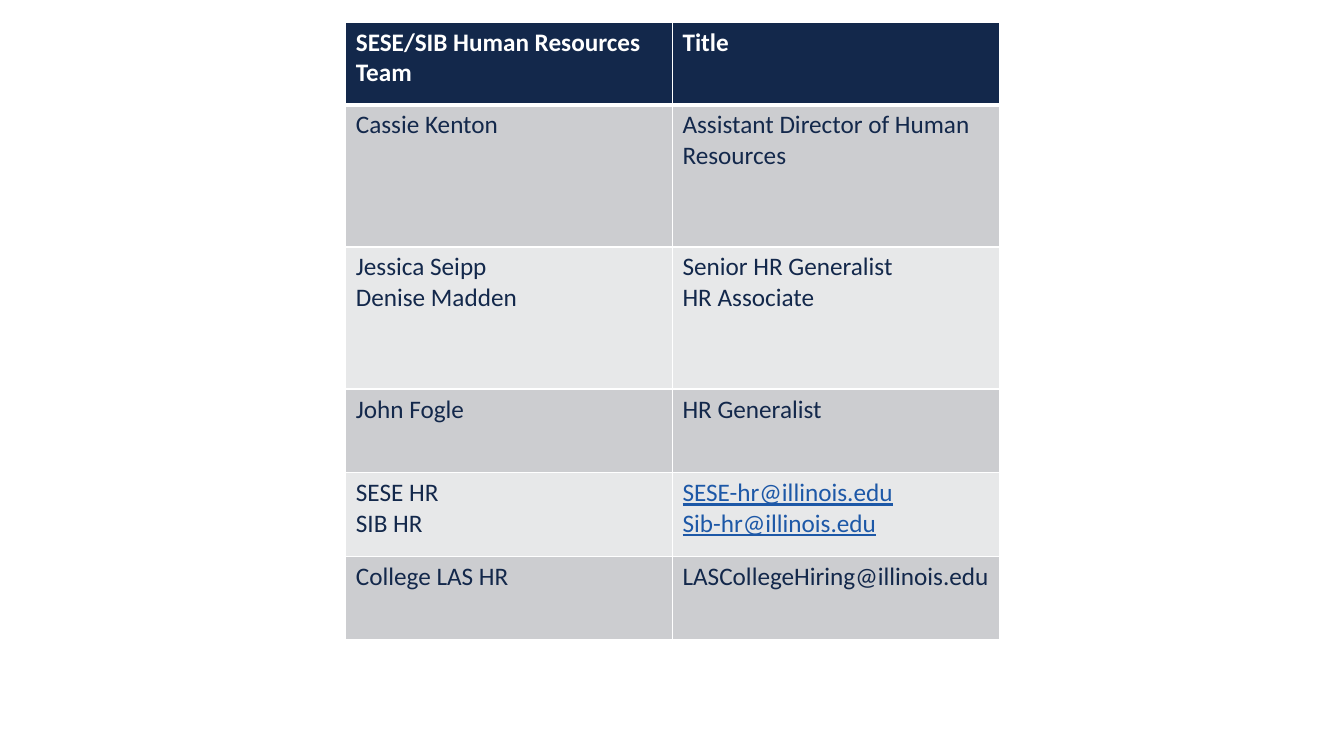
import dataclasses

import pptx
import pptx.dml.color
import pptx.oxml
import pptx.oxml.ns
import pptx.util
from pptx.util import Inches


@dataclasses.dataclass(frozen=True)
class Theme:
    font: str = "Calibri"
    size: int = 18
    navy: str = "13284B"
    white: str = "FFFFFF"
    link: str = "1D58A7"
    dark_band: str = "CCCDD0"
    light_band: str = "E7E8E9"
    border: float = 1
    header_border: float = 3


THEME = Theme()

TEAM = [
    (["SESE/SIB Human Resources Team"], ["Title"]),
    (["Cassie Kenton"], ["Assistant Director of Human Resources"]),
    (["Jessica Seipp", "Denise Madden"], ["Senior HR Generalist", "HR Associate"]),
    (["John Fogle"], ["HR Generalist"]),
    (["SESE HR", "SIB HR"], ["SESE-hr@illinois.edu", "Sib-hr@illinois.edu"]),
    (["College LAS HR"], ["LASCollegeHiring@illinois.edu"]),
]
ROW_HEIGHTS = [0.82, 1.41, 1.41, 0.83, 0.83, 0.83]
COLUMN_WIDTH = 3.24
LINKED_CELL = (4, 1)


def rgb(color):
    return pptx.dml.color.RGBColor.from_string(color)


def write_text(frame, lines, *, color=THEME.navy, bold=False, underline=False):
    for index, line in enumerate(lines):
        paragraph = frame.add_paragraph() if index else frame.paragraphs[0]
        run = paragraph.add_run()
        run.text = line
        run.font.name = THEME.font
        run.font.size = pptx.util.Pt(THEME.size)
        run.font.bold = bold
        run.font.underline = underline
        run.font.color.rgb = rgb(color)


def set_borders(cell, **widths):
    properties = cell._tc.get_or_add_tcPr()
    for side in ("L", "R", "T", "B"):
        width = pptx.util.Pt(widths.get(side, THEME.border))
        properties.append(pptx.oxml.parse_xml(
            f'<a:ln{side} {pptx.oxml.ns.nsdecls("a")} w="{width}">'
            f'<a:solidFill><a:srgbClr val="{THEME.white}"/></a:solidFill>'
            f'</a:ln{side}>'))


def set_fill(cell, color):
    cell.fill.solid()
    cell.fill.fore_color.rgb = rgb(color)


def format_header_cell(cell, lines):
    set_borders(cell, B=THEME.header_border)
    set_fill(cell, THEME.navy)
    write_text(cell.text_frame, lines, color=THEME.white, bold=True)


def format_member_cell(cell, lines, row, linked):
    set_borders(cell, T=THEME.header_border if row == 1 else THEME.border)
    set_fill(cell, THEME.dark_band if row % 2 else THEME.light_band)
    write_text(cell.text_frame, lines,
               color=THEME.link if linked else THEME.navy, underline=linked)


def add_team_table(slide):
    team_table = slide.shapes.add_table(
        len(TEAM), 2, Inches(3.43), Inches(0.22),
        Inches(2 * COLUMN_WIDTH), Inches(sum(ROW_HEIGHTS))).table
    for column in team_table.columns:
        column.width = Inches(COLUMN_WIDTH)
    for row, (entries, height) in enumerate(zip(TEAM, ROW_HEIGHTS)):
        team_table.rows[row].height = Inches(height)
        for column, lines in enumerate(entries):
            cell = team_table.cell(row, column)
            if row == 0:
                format_header_cell(cell, lines)
            else:
                format_member_cell(cell, lines, row, (row, column) == LINKED_CELL)


def main():
    presentation = pptx.Presentation()
    presentation.slide_width = Inches(13.33)
    presentation.slide_height = Inches(7.5)
    slide = presentation.slides.add_slide(presentation.slide_layouts[6])
    slide.background.fill.solid()
    slide.background.fill.fore_color.rgb = rgb(THEME.white)
    add_team_table(slide)
    presentation.save("out.pptx")


if __name__ == "__main__":
    main()
